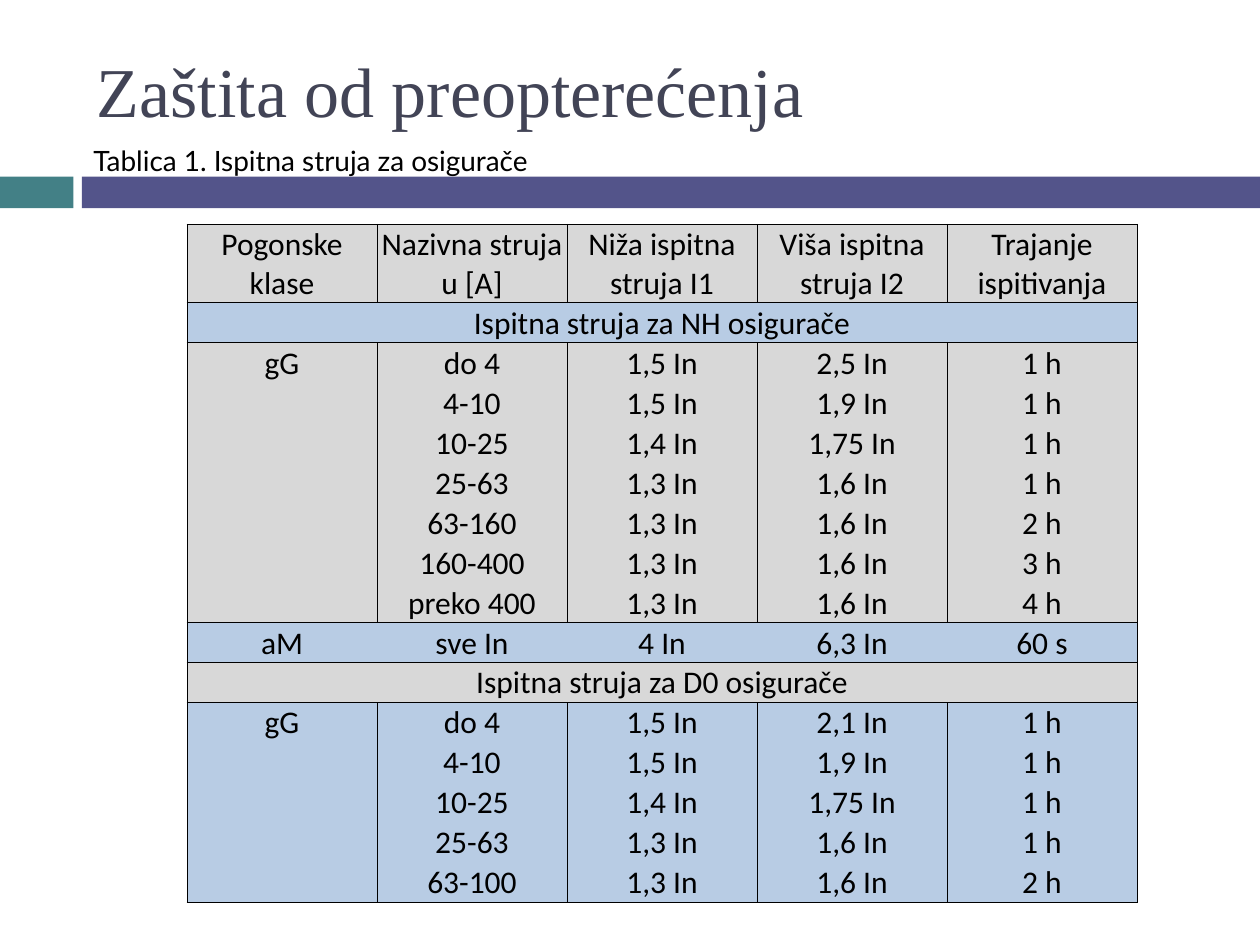
import pptx
import pptx.dml.color
import pptx.enum.shapes
import pptx.enum.text
import pptx.oxml.ns
import pptx.util
from lxml import etree

Cm = pptx.util.Cm
Pt = pptx.util.Pt
RGBColor = pptx.dml.color.RGBColor
qn = pptx.oxml.ns.qn

TEAL = RGBColor(0x43, 0x80, 0x86)
VIOLET = RGBColor(0x53, 0x54, 0x8A)
SLATE = RGBColor(0x42, 0x44, 0x56)
BLACK = RGBColor(0x00, 0x00, 0x00)
GREY = RGBColor(0xD8, 0xD8, 0xD8)
BLUE = RGBColor(0xB8, 0xCC, 0xE4)


def format_font(paragraph, name, size, color):
    for attribute, value in {"name": name, "size": Pt(size)}.items():
        setattr(paragraph.font, attribute, value)
    paragraph.font.color.rgb = color


def draw_borders(cell, visible_sides):
    properties = cell._tc.get_or_add_tcPr()
    for side in "LRTB":
        line = etree.SubElement(properties, qn(f"a:ln{side}"), w=str(Pt(0.5)))
        if side in visible_sides:
            solid = etree.SubElement(line, qn("a:solidFill"))
            etree.SubElement(solid, qn("a:srgbClr"), val=str(BLACK))
        else:
            etree.SubElement(line, qn("a:noFill"))


presentation = pptx.Presentation()
presentation.slide_width = Cm(25.4)
presentation.slide_height = Cm(19.05)
slide = presentation.slides.add_slide(presentation.slide_layouts[1])
heading = slide.shapes.title
caption = slide.placeholders[1]

# Coloured band behind the text
for left, width, color in ((0, 1.48, TEAL), (1.65, 23.75, VIOLET)):
    band = slide.shapes.add_shape(
        pptx.enum.shapes.MSO_SHAPE.RECTANGLE, Cm(left), Cm(3.56), Cm(width), Cm(0.64))
    band.shadow.inherit = False
    band.fill.solid()
    band.fill.fore_color.rgb = color
    band.line.fill.background()
    heading._element.addprevious(band._element)

# Title and table caption
texts = (
    (heading, "Zaštita od preopterećenja", (1.7, 0.79, 22.66, 2.01),
     pptx.enum.text.MSO_ANCHOR.MIDDLE, ("Times New Roman", 40, SLATE)),
    (caption, "Tablica 1. Ispitna struja za osigurače", (1.63, 2.77, 22.66, 0.91),
     pptx.enum.text.MSO_ANCHOR.TOP, ("Lato", 16, BLACK)),
)
for holder, wording, box, anchor, font in texts:
    for attribute, length in zip(("left", "top", "width", "height"), box):
        setattr(holder, attribute, Cm(length))
    frame = holder.text_frame
    frame.text = wording
    frame_format = {"word_wrap": True, "vertical_anchor": anchor,
                    "auto_size": pptx.enum.text.MSO_AUTO_SIZE.NONE}
    for attribute, value in frame_format.items():
        setattr(frame, attribute, value)
    frame.paragraphs[0].alignment = pptx.enum.text.PP_ALIGN.LEFT
    format_font(frame.paragraphs[0], *font)

caption_line = caption.text_frame.paragraphs[0]
caption_line.level = 1
caption_line.space_before = Pt(5.5)
caption_properties = caption_line._p.get_or_add_pPr()
caption_properties.set("marL", "0")
caption_properties.set("indent", "0")
bullet = etree.Element(qn("a:buNone"))
caption_properties.find(qn("a:spcBef")).addnext(bullet)

# Table content: blocks of rows as (fill, inner vertical lines, rows)
blocks = (
    (GREY, True, [("Pogonske klase", "Nazivna struja u [A]", "Niža ispitna struja I1",
                   "Viša ispitna struja I2", "Trajanje ispitivanja")]),
    (BLUE, True, [("Ispitna struja za NH osigurače",)]),
    (GREY, True, [
        ("gG", "do 4", "1,5 In", "2,5 In", "1 h"),
        ("", "4-10", "1,5 In", "1,9 In", "1 h"),
        ("", "10-25", "1,4 In", "1,75 In", "1 h"),
        ("", "25-63", "1,3 In", "1,6 In", "1 h"),
        ("", "63-160", "1,3 In", "1,6 In", "2 h"),
        ("", "160-400", "1,3 In", "1,6 In", "3 h"),
        ("", "preko 400", "1,3 In", "1,6 In", "4 h"),
    ]),
    (BLUE, False, [("aM", "sve In", "4 In", "6,3 In", "60 s")]),
    (GREY, True, [("Ispitna struja za D0 osigurače",)]),
    (BLUE, True, [
        ("gG", "do 4", "1,5 In", "2,1 In", "1 h"),
        ("", "4-10", "1,5 In", "1,9 In", "1 h"),
        ("", "10-25", "1,4 In", "1,75 In", "1 h"),
        ("", "25-63", "1,3 In", "1,6 In", "1 h"),
        ("", "63-100", "1,3 In", "1,6 In", "2 h"),
    ]),
)
row_count = sum(len(rows) for _, _, rows in blocks)
last_column = 4

# Table grid
fuse_table = slide.shapes.add_table(
    row_count, last_column + 1, Cm(3.77), Cm(4.52), Cm(19.13), Cm(13.55)).table
fuse_table.first_row = False
fuse_table.horz_banding = False
for column in fuse_table.columns:
    column.width = Cm(3.83)
for row in fuse_table.rows:
    row.height = Cm(0.8)
fuse_table.rows[0].height = Cm(1.55)

# Table cells, block by block
cell_format = {"margin_left": Cm(0.03), "margin_right": Cm(0.03),
               "margin_top": Cm(0.03), "margin_bottom": 0}
first = 0
for fill, ruled, rows in blocks:
    last = first + len(rows) - 1
    if len(rows[0]) == 1:
        fuse_table.cell(first, 0).merge(fuse_table.cell(first, last_column))
    elif last > first:
        fuse_table.cell(first, 0).merge(fuse_table.cell(last, 0))
    for row_index, values in enumerate(rows, first):
        for column_index in range(last_column + 1):
            cell = fuse_table.cell(row_index, column_index)
            sides = {
                "L": ruled or column_index == 0,
                "R": ruled or column_index == last_column,
                "T": row_index == first,
                "B": row_index == last or cell.is_merge_origin,
            }
            draw_borders(cell, [side for side, visible in sides.items() if visible])
            cell.fill.solid()
            cell.fill.fore_color.rgb = fill
            for attribute, value in cell_format.items():
                setattr(cell, attribute, value)
            if column_index < len(values):
                cell.text = values[column_index]
            paragraph = cell.text_frame.paragraphs[0]
            paragraph.alignment = pptx.enum.text.PP_ALIGN.CENTER
            format_font(paragraph, "Calibri", 18, BLACK)
    first = last + 1

presentation.save("out.pptx")
